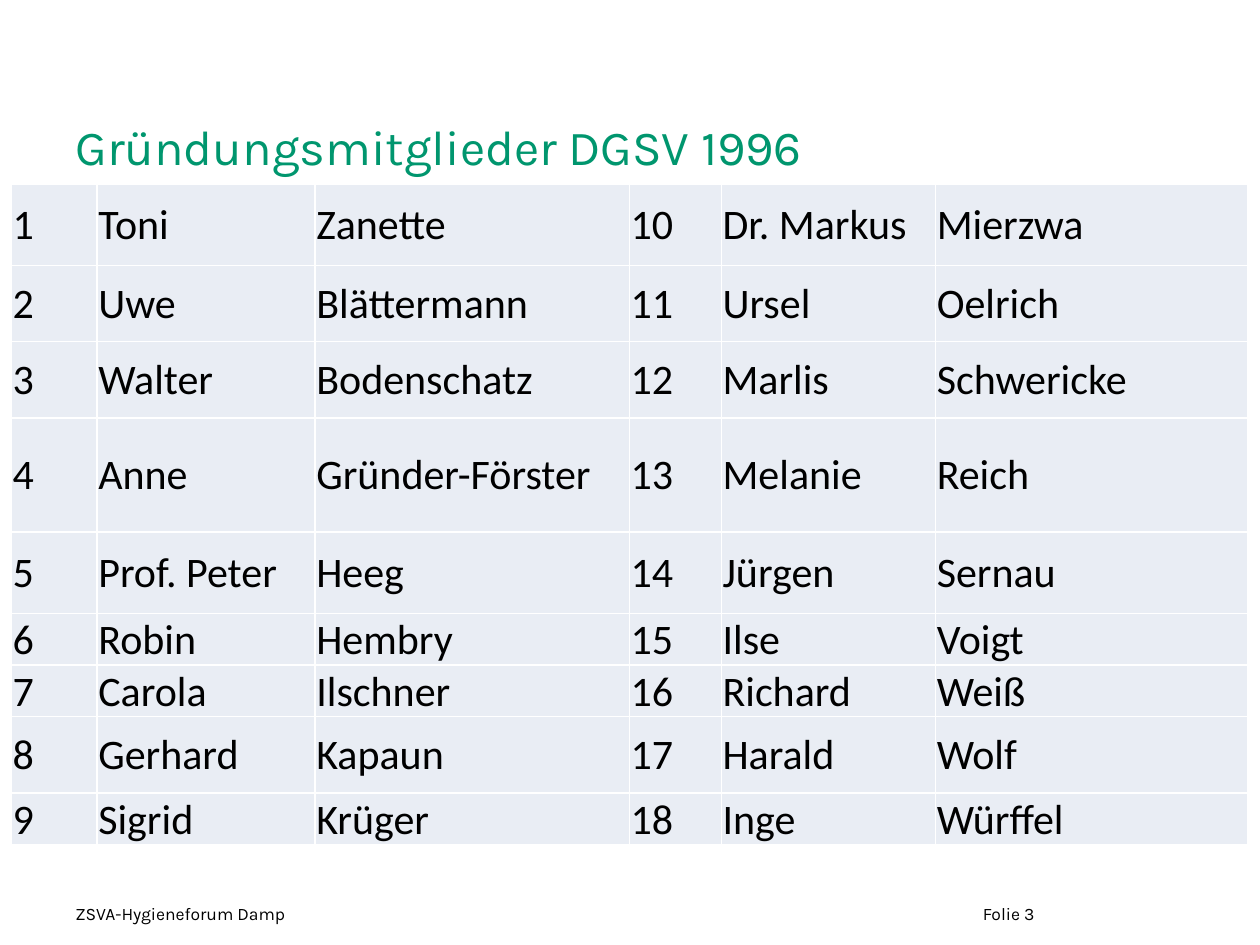
from lxml import etree
from pptx import Presentation
from pptx.dml.color import RGBColor
from pptx.enum.text import MSO_ANCHOR, PP_ALIGN
from pptx.oxml.ns import qn
from pptx.util import Pt

COLORS = {"title": "00966E", "text": "000000", "cell": "E9EDF4", "border": "FFFFFF"}

FOUNDERS = [
    ("Toni", "Zanette"), ("Uwe", "Blättermann"), ("Walter", "Bodenschatz"),
    ("Anne", "Gründer-Förster"), ("Prof. Peter", "Heeg"), ("Robin", "Hembry"),
    ("Carola", "Ilschner"), ("Gerhard", "Kapaun"), ("Sigrid", "Krüger"),
    ("Dr. Markus", "Mierzwa"), ("Ursel", "Oelrich"), ("Marlis", "Schwericke"),
    ("Melanie", "Reich"), ("Jürgen", "Sernau"), ("Ilse", "Voigt"),
    ("Richard", "Weiß"), ("Harald", "Wolf"), ("Inge", "Würffel"),
]
COLUMN_WIDTHS = [49, 124.6, 179.6, 52.6, 122.4, 178.6]
ROW_HEIGHTS = [46.5, 43.7, 43.7, 65, 46.5, 23, 23, 43.7, 23]


def add_run(paragraph, text, size, font_name, color):
    run = paragraph.add_run()
    run.text = text
    run.font.size = Pt(size)
    run.font.name = font_name
    run.font.color.rgb = RGBColor.from_string(COLORS[color])


def place_title(slide, left, top, width, height):
    title = slide.shapes.title
    title.left, title.top, title.width, title.height = map(Pt, (left, top, width, height))
    title.text_frame.vertical_anchor = MSO_ANCHOR.BOTTOM
    paragraph = title.text_frame.paragraphs[0]
    paragraph.alignment = PP_ALIGN.LEFT
    add_run(paragraph, "Gründungsmitglieder DGSV 1996", 28, "Karla", "title")


def add_footer_text(slide, text, alignment, left, top, width, height):
    text_frame = slide.shapes.add_textbox(*map(Pt, (left, top, width, height))).text_frame
    text_frame.word_wrap = True
    text_frame.vertical_anchor = MSO_ANCHOR.MIDDLE
    paragraph = text_frame.paragraphs[0]
    paragraph.alignment = alignment
    add_run(paragraph, text, 10, "Karla", "text")


def add_borders(cell):
    properties = cell._tc.get_or_add_tcPr()
    # Border lines come before the fill in the cell properties
    for position, side in enumerate(("lnL", "lnR", "lnT", "lnB")):
        line = etree.Element(qn(f"a:{side}"), w=str(Pt(1)))
        fill = etree.SubElement(line, qn("a:solidFill"))
        etree.SubElement(fill, qn("a:srgbClr"), val=COLORS["border"])
        properties.insert(position, line)


def format_cell(cell, text):
    cell.margin_left = cell.margin_right = cell.margin_top = Pt(0.72)
    cell.margin_bottom = Pt(0)
    cell.vertical_anchor = MSO_ANCHOR.MIDDLE
    cell.fill.solid()
    cell.fill.fore_color.rgb = RGBColor.from_string(COLORS["cell"])
    add_borders(cell)
    add_run(cell.text_frame.paragraphs[0], text, 24, "Calibri", "text")


def add_founders_table(slide, left, top, width, height):
    row_count = len(ROW_HEIGHTS)
    table = slide.shapes.add_table(
        row_count, len(COLUMN_WIDTHS), *map(Pt, (left, top, width, height))).table
    table.first_row = table.horz_banding = False
    for column, share in zip(table.columns, COLUMN_WIDTHS):
        column.width = Pt(width * share / sum(COLUMN_WIDTHS))
    for row, row_height in zip(table.rows, ROW_HEIGHTS):
        row.height = Pt(row_height)

    # Two blocks of number, first name and surname, filled downwards
    for index, (first_name, surname) in enumerate(FOUNDERS):
        block, row_index = divmod(index, row_count)
        for offset, text in enumerate((str(index + 1), first_name, surname)):
            format_cell(table.cell(row_index, block * 3 + offset), text)


def main():
    presentation = Presentation()
    presentation.slide_width, presentation.slide_height = Pt(720), Pt(540)
    slide = presentation.slides.add_slide(presentation.slide_layouts[5])

    # Title
    place_title(slide, 36, 15, 648, 88.6)
    # Footer
    add_footer_text(slide, "ZSVA-Hygieneforum Damp", PP_ALIGN.LEFT, 36, 507.6, 471, 28.8)
    add_footer_text(slide, "Folie 3", PP_ALIGN.RIGHT, 516.2, 507.6, 82, 28.8)
    # Founding members
    add_founders_table(slide, 6.5, 105.1, 706.8, 377.3)

    presentation.save("out.pptx")


if __name__ == "__main__":
    main()
